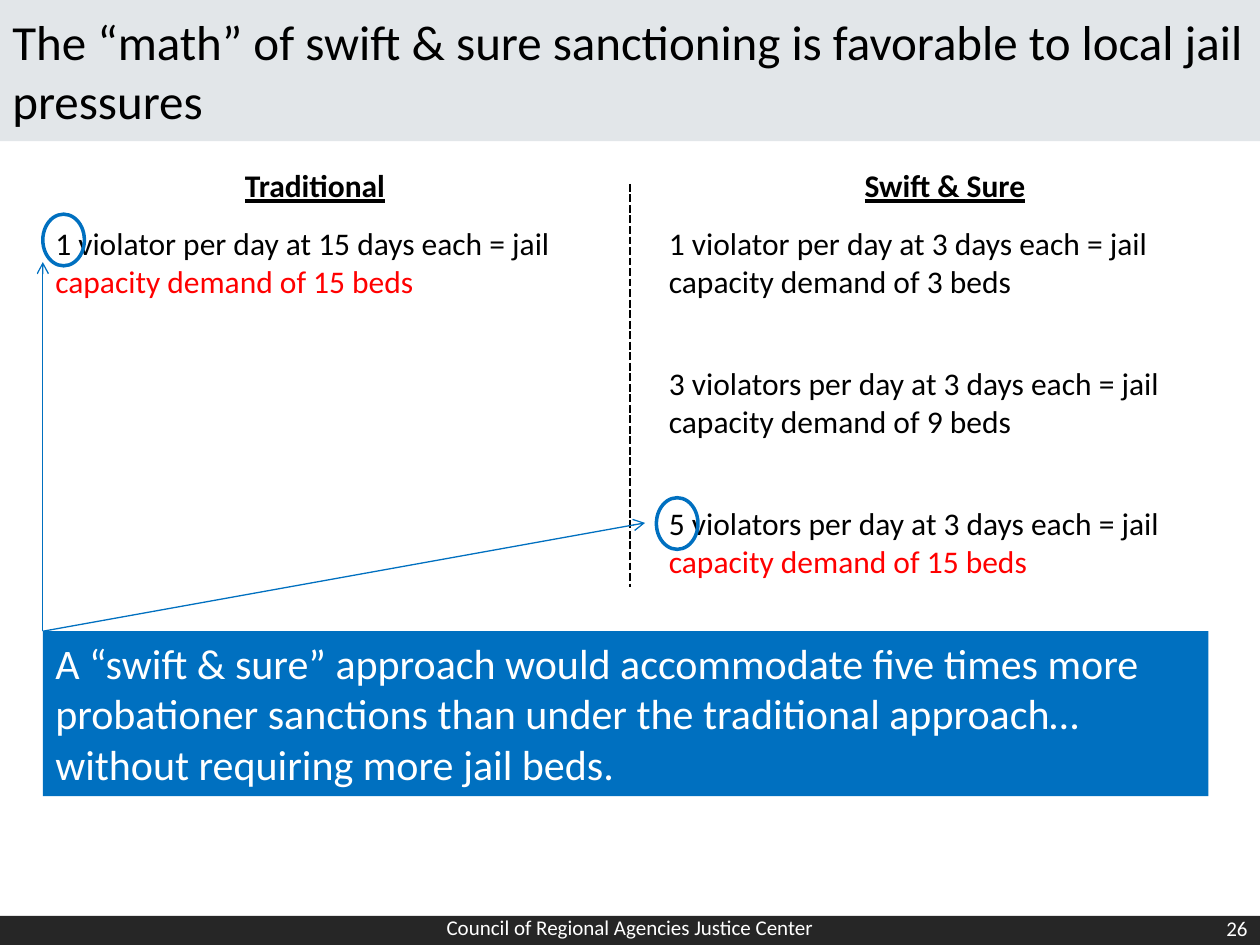
from lxml import etree
from pptx import Presentation
from pptx.dml.color import RGBColor
from pptx.enum.dml import MSO_LINE
from pptx.enum.shapes import MSO_CONNECTOR, MSO_SHAPE
from pptx.enum.text import MSO_ANCHOR, PP_ALIGN
from pptx.oxml.ns import qn
from pptx.util import Inches, Pt

RECT, OVAL = MSO_SHAPE.RECTANGLE, MSO_SHAPE.OVAL
LINE, DASH = MSO_CONNECTOR.STRAIGHT, MSO_LINE.SQUARE_DOT
LEFT, MID, RIGHT = PP_ALIGN.LEFT, PP_ALIGN.CENTER, PP_ALIGN.RIGHT
TOP, CENTER = MSO_ANCHOR.TOP, MSO_ANCHOR.MIDDLE

BLACK, WHITE, RED = "000000", "FFFFFF", "FF0000"
BLUE, PALE, DARK = "0070C0", "E2E6E9", "262626"

# The grid: 100 columns by 75 rows
WIDE, HIGH = 100, 75


def rgb(code):
    return RGBColor.from_string(code)


class Deck:
    font = "Calibri"

    def __init__(self):
        self.prs = Presentation()
        self.prs.slide_width, self.prs.slide_height = Inches(10), Inches(7.5)
        self.cell = self.prs.slide_width / WIDE
        self.slide = self.prs.slides.add_slide(self.prs.slide_layouts[6])

    def grid(self, *cells):
        return [round(c * self.cell) for c in cells]

    def label(self, shape, parts, size, align=LEFT, anchor=TOP, bold=False):
        """Fill a shape with one paragraph of (text, colour) parts."""
        frame = shape.text_frame
        frame.word_wrap = True
        frame.vertical_anchor = anchor
        para = frame.paragraphs[0]
        para.text = parts[0][0]
        para.alignment = align
        for words, _ in parts[1:]:
            para.add_run().text = words
        for run, (_, color) in zip(para.runs, parts):
            run.font.name, run.font.size = self.font, Pt(size)
            run.font.color.rgb = rgb(color)
            run.font.bold = run.font.underline = bold

    def text(self, box, parts, size, **style):
        shape = self.slide.shapes.add_textbox(*self.grid(*box))
        self.label(shape, parts, size, **style)

    def block(self, box, fill):
        shape = self.slide.shapes.add_shape(RECT, *self.grid(*box))
        shape.shadow.inherit = False
        shape.fill.solid()
        shape.fill.fore_color.rgb = rgb(fill)
        shape.line.fill.background()
        return shape

    def ring(self, x, y):
        shape = self.slide.shapes.add_shape(OVAL, *self.grid(x, y, 3.3, 4.1))
        shape.shadow.inherit = False
        shape.fill.background()
        shape.line.color.rgb = rgb(BLUE)
        shape.line.width = Pt(2)

    def rule(self, start, end, color, width, dash=None, arrow=False):
        shape = self.slide.shapes.add_connector(LINE, *self.grid(*start, *end))
        shape.line.color.rgb = rgb(color)
        shape.line.width = Pt(width)
        if dash:
            shape.line.dash_style = dash
        props = shape._element.spPr
        if arrow:
            tail = etree.SubElement(props.find(qn("a:ln")), qn("a:tailEnd"))
            tail.set("type", "arrow")
        etree.SubElement(props, qn("a:effectLst"))


def main():
    deck = Deck()
    half = WIDE / 2
    edge, right = 3.4, 52.1
    first, step = 17.3, 11.1
    base = 50.1

    # Footer bar and title band
    deck.block((0, 72.7, WIDE, HIGH - 72.7), DARK)
    title = deck.block((0, 0, WIDE, 11.2), PALE)
    deck.label(title, [("The “math” of swift & sure sanctioning is favorable "
                        "to local jail pressures", BLACK)], 28, anchor=CENTER)
    deck.text((76.7, 71.7, 23.3, 4), [("26", WHITE)], 12,
              align=RIGHT, anchor=CENTER)

    # Column heads and divider
    deck.rule((half, 14.6), (half, 46.6), BLACK, 1.5, dash=DASH)
    for i, head in enumerate(("Traditional", "Swift & Sure")):
        deck.text((i * half, 12.7, half, 4), [(head, BLACK)], 18,
                  align=MID, bold=True)

    # Cases: column, row, violators, days, beds, colour of the result
    cases = (
        (edge, 0, "1 violator", 15, 15, RED),
        (right, 0, "1 violator", 3, 3, BLACK),
        (right, 1, "3 violators", 3, 9, BLACK),
        (right, 2, "5 violators", 3, 15, RED),
    )
    for x, row, who, days, beds, color in cases:
        deck.text((x, first + row * step, 43.8, 7.1),
                  [(f"{who} per day at {days} days each = jail ", BLACK),
                   (f"capacity demand of {beds} beds", color)], 18)

    # Rings around the compared counts
    deck.ring(edge, 17)
    deck.ring(right, first + 2 * step)

    # Conclusion with arrows to both counts
    note = deck.block((edge, base, 92.5, 13.1), BLUE)
    deck.label(note, [("A “swift & sure” approach would accommodate five times "
                       "more probationer sanctions than under the traditional "
                       "approach…without requiring more jail beds.", WHITE)], 24)
    for tip in ((edge, 20.8), (51.2, 41.5)):
        deck.rule((edge, base), tip, BLUE, 0.75, arrow=True)

    # Footer credit
    deck.text((32.2, 71.5, 35.6, 4.2),
              [("Council of Regional Agencies Justice Center", WHITE)], 12,
              align=MID, anchor=CENTER)

    deck.prs.save("out.pptx")


if __name__ == "__main__":
    main()
